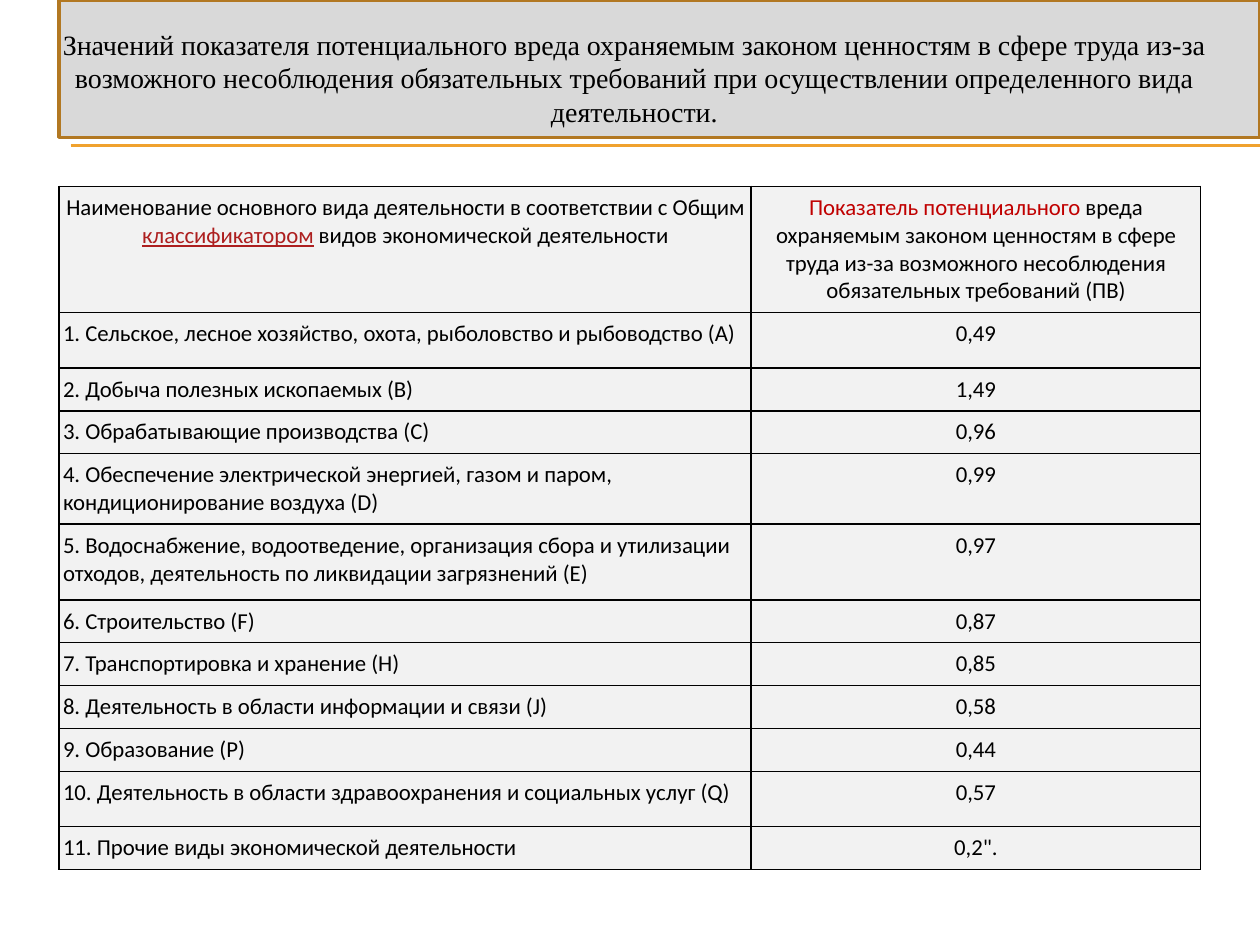
from dataclasses import dataclass
from lxml.etree import SubElement
from pptx import Presentation
from pptx.dml.color import RGBColor
from pptx.enum.shapes import MSO_CONNECTOR, MSO_SHAPE
from pptx.enum.text import MSO_ANCHOR, MSO_AUTO_SIZE, PP_ALIGN
from pptx.oxml.ns import qn
from pptx.util import Inches, Pt


@dataclass(frozen=True)
class Theme:
    ink: str = "000000"
    accent: str = "C00000"
    link: str = "AD1F1F"
    banner: str = "D9D9D9"
    banner_edge: str = "B27822"
    rule: str = "F0A22E"
    cell: str = "F2F2F2"
    title_font: str = "Times New Roman"
    body_font: str = "Calibri"
    title_size: float = 16
    body_size: float = 13


THEME = Theme()
WIDTH, HEIGHT = 10, 7.5
MARGIN = 0.47

TITLE = (
    "Значений показателя потенциального вреда охраняемым законом ценностям в сфере труда "
    "из-за возможного несоблюдения обязательных требований при осуществлении определенного "
    "вида деятельности."
)
HEADERS = [
    [
        ("Наименование основного вида деятельности в соответствии с Общим ", THEME.ink),
        ("классификатором", THEME.link),
        (" видов экономической деятельности", THEME.ink),
    ],
    [
        ("Показатель потенциального ", THEME.accent),
        ("вреда охраняемым законом ценностям в сфере труда из-за возможного несоблюдения "
         "обязательных требований (ПВ)", THEME.ink),
    ],
]
ACTIVITIES = [
    ("1. Сельское, лесное хозяйство, охота, рыболовство и рыбоводство (A)", "0,49"),
    ("2. Добыча полезных ископаемых (B)", "1,49"),
    ("3. Обрабатывающие производства (C)", "0,96"),
    ("4. Обеспечение электрической энергией, газом и паром, кондиционирование воздуха (D)", "0,99"),
    ("5. Водоснабжение, водоотведение, организация сбора и утилизации отходов, "
     "деятельность по ликвидации загрязнений (E)", "0,97"),
    ("6. Строительство (F)", "0,87"),
    ("7. Транспортировка и хранение (H)", "0,85"),
    ("8. Деятельность в области информации и связи (J)", "0,58"),
    ("9. Образование (P)", "0,44"),
    ("10. Деятельность в области здравоохранения и социальных услуг (Q)", "0,57"),
    ("11. Прочие виды экономической деятельности", '0,2".'),
]
ROW = 0.34
TALL_ROWS = {0: 0.98, 1: 0.44, 4: 0.55, 5: 0.6, 10: 0.44}
NAME_SHARE = 0.606


def color(value):
    return RGBColor.from_string(value)


def add_span(para, text, font, size, ink):
    span = para.add_run()
    span.text = text
    span.font.name = font
    span.font.size = Pt(size)
    span.font.color.rgb = color(ink)
    span.font.underline = True if ink == THEME.link else None


def add_rules(page, left, right, heights):
    for height in heights:
        rule = page.shapes.add_connector(
            MSO_CONNECTOR.STRAIGHT, Inches(left), Inches(height), Inches(right), Inches(height))
        rule.line.color.rgb = color(THEME.rule)
        rule.line.width = Pt(0.75)
        SubElement(rule._element.spPr, qn("a:effectLst"))


def add_banner(page, box):
    banner = page.shapes.add_shape(MSO_SHAPE.RECTANGLE, *map(Inches, box))
    banner.shadow.inherit = False
    banner.fill.solid()
    banner.fill.fore_color.rgb = color(THEME.banner)
    banner.line.color.rgb = color(THEME.banner_edge)
    banner.line.width = Pt(2)


def place_title(page, box):
    title = page.shapes.title
    title.left, title.top, title.width, title.height = map(Inches, box)
    frame = title.text_frame
    frame.word_wrap = True
    frame.auto_size = MSO_AUTO_SIZE.SHAPE_TO_FIT_TEXT
    frame.vertical_anchor = MSO_ANCHOR.MIDDLE
    para = frame.paragraphs[0]
    para.alignment = PP_ALIGN.CENTER
    add_span(para, TITLE, THEME.title_font, THEME.title_size, THEME.ink)
    title.element.getparent().append(title.element)


def add_borders(cell):
    properties = cell._tc.get_or_add_tcPr()
    for position, side in enumerate(("a:lnL", "a:lnR", "a:lnT", "a:lnB")):
        border = properties.makeelement(qn(side), {"w": str(Pt(1))})
        fill = SubElement(border, qn("a:solidFill"))
        SubElement(fill, qn("a:srgbClr"), val=THEME.ink)
        properties.insert(position, border)


def fill_cell(cell, spans, alignment):
    cell.margin_left = cell.margin_right = Inches(0.03)
    cell.margin_top = cell.margin_bottom = Inches(0.06)
    cell.fill.solid()
    cell.fill.fore_color.rgb = color(THEME.cell)
    add_borders(cell)
    para = cell.text_frame.paragraphs[0]
    para.alignment = alignment
    for text, ink in spans:
        add_span(para, text, THEME.body_font, THEME.body_size, ink)


def add_activity_table(page, left, top, width):
    rows = [HEADERS] + [[[(text, THEME.ink)] for text in activity] for activity in ACTIVITIES]
    heights = [TALL_ROWS.get(index, ROW) for index in range(len(rows))]
    box = map(Inches, (left, top, width, sum(heights)))
    table = page.shapes.add_table(len(rows), len(HEADERS), *box).table
    for column, share in zip(table.columns, (NAME_SHARE, 1 - NAME_SHARE)):
        column.width = Inches(width * share)
    for row_index, (row, height) in enumerate(zip(rows, heights)):
        table.rows[row_index].height = Inches(height)
        for column_index, spans in enumerate(row):
            is_name = row_index > 0 and column_index == 0
            alignment = PP_ALIGN.LEFT if is_name else PP_ALIGN.CENTER
            fill_cell(table.cell(row_index, column_index), spans, alignment)


def main():
    deck = Presentation()
    deck.slide_width, deck.slide_height = Inches(WIDTH), Inches(HEIGHT)
    page = deck.slides.add_slide(deck.slide_layouts[5])
    add_rules(page, 0.56, WIDTH, (1.15, 1.16))
    add_banner(page, (MARGIN, 0, WIDTH - MARGIN, 1.09))
    add_activity_table(page, MARGIN, 1.48, WIDTH - 2 * MARGIN)
    place_title(page, (0.31, 0.16, 9.45, 0.91))
    deck.save("out.pptx")


if __name__ == "__main__":
    main()
